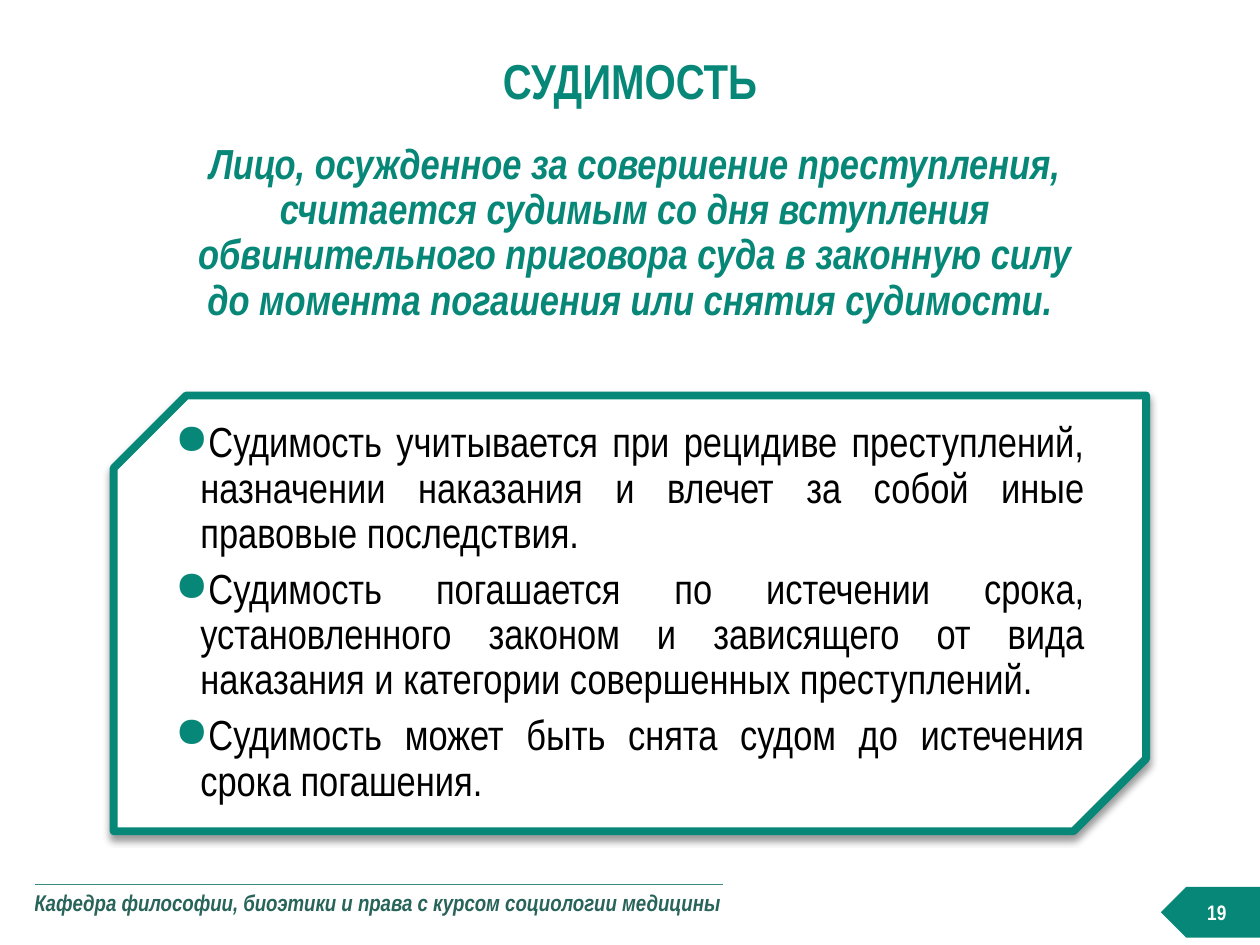
from dataclasses import dataclass
from typing import Any

from lxml.etree import SubElement
from pptx import Presentation
from pptx.dml.color import RGBColor
from pptx.enum.shapes import MSO_SHAPE
from pptx.enum.text import MSO_ANCHOR, PP_ALIGN
from pptx.oxml.ns import qn
from pptx.util import Pt


@dataclass(frozen=True)
class Theme:
    font: str = "Arial Narrow"
    accent: str = "078777"
    footer: str = "28645A"
    rule: str = "388E84"
    paper: str = "FFFFFF"
    ink: str = "000000"
    title_size: float = 28
    body_size: float = 24
    footer_size: float = 13
    number_size: float = 12


@dataclass(frozen=True)
class Box:
    left: float
    top: float
    width: float
    height: float

    def lengths(self) -> list[Pt]:
        return [Pt(v) for v in (self.left, self.top, self.width, self.height)]


@dataclass(frozen=True)
class TextStyle:
    size: float
    color: str
    paragraph: dict[str, Any]
    bold: bool = False
    italic: bool = False
    bullet: bool = False


THEME = Theme()
HEADING = {"alignment": PP_ALIGN.CENTER, "line_spacing": 0.9}
RULES = {"alignment": PP_ALIGN.JUSTIFY, "line_spacing": 0.9, "space_after": Pt(6)}
TITLE = TextStyle(THEME.title_size, THEME.accent, HEADING, bold=True)
DEFINITION = TextStyle(THEME.body_size, THEME.accent, HEADING, bold=True, italic=True)
RULE_LIST = TextStyle(THEME.body_size, THEME.ink, RULES, bullet=True)
NUMBER = TextStyle(THEME.number_size, THEME.paper, {"alignment": PP_ALIGN.CENTER}, bold=True)
FOOTER = TextStyle(THEME.footer_size, THEME.footer, {"alignment": PP_ALIGN.LEFT}, bold=True, italic=True)

CONSEQUENCES = [
    "Судимость учитывается при рецидиве преступлений, назначении наказания и влечет за собой иные правовые последствия.",
    "Судимость погашается по истечении срока, установленного законом и зависящего от вида наказания и категории совершенных преступлений.",
    "Судимость может быть снята судом до истечения срока погашения.",
]
DEFINITION_LINES = [
    "Лицо, осужденное за совершение преступления, считается судимым со дня вступления обвинительного приговора суда в законную силу",
    "до момента погашения или снятия судимости. ",
]


def set_all(target: Any, values: dict[str, Any]) -> None:
    for name, value in values.items():
        setattr(target, name, value)


def add_bullet(paragraph: Any) -> None:
    properties = paragraph._p.get_or_add_pPr()
    set_all(properties, {"marL": Pt(14.4), "indent": Pt(-14.4)})
    for name, value in {"marL": Pt(14.4), "indent": Pt(-14.4)}.items():
        properties.set(name, str(int(value)))
    bullet_color = SubElement(properties, qn("a:buClr"))
    SubElement(bullet_color, qn("a:srgbClr"), val=THEME.accent)
    SubElement(properties, qn("a:buChar"), char="●")


def write(frame: Any, paragraphs: list[list[str]], style: TextStyle) -> None:
    for index, lines in enumerate(paragraphs):
        paragraph = frame.paragraphs[0] if index == 0 else frame.add_paragraph()
        if style.bullet:
            add_bullet(paragraph)
        set_all(paragraph, style.paragraph)
        for position, line in enumerate(lines):
            if position:
                paragraph.add_line_break()
            run = paragraph.add_run()
            run.text = line
            set_all(run.font, {"name": THEME.font, "size": Pt(style.size),
                               "bold": style.bold, "italic": style.italic})
            run.font.color.rgb = RGBColor.from_string(style.color)


def set_frame(frame: Any, insets: tuple[float, float, float, float]) -> None:
    sides = ("margin_left", "margin_top", "margin_right", "margin_bottom")
    set_all(frame, {"word_wrap": True, "vertical_anchor": MSO_ANCHOR.MIDDLE,
                    **{side: Pt(inset) for side, inset in zip(sides, insets)}})


def add_text(slide: Any, box: Box, paragraphs: list[list[str]], style: TextStyle,
             insets: tuple[float, float, float, float]) -> None:
    frame = slide.shapes.add_textbox(*box.lengths()).text_frame
    set_frame(frame, insets)
    write(frame, paragraphs, style)


def add_mirrored(slide: Any, kind: MSO_SHAPE, box: Box, fill: str, paragraphs: list[list[str]],
                 style: TextStyle, insets: tuple[float, float, float, float]) -> Any:
    shape = slide.shapes.add_shape(kind, *box.lengths())
    shape.shadow.inherit = False
    shape._element.spPr.get_or_add_xfrm().set("flipH", "1")
    shape.fill.solid()
    shape.fill.fore_color.rgb = RGBColor.from_string(fill)
    shape.line.fill.background()
    set_frame(shape.text_frame, insets)
    write(shape.text_frame, paragraphs, style)
    return shape


def add_outline_and_shadow(shape: Any) -> None:
    shape.line.color.rgb = RGBColor.from_string(THEME.accent)
    shape.line.width = Pt(4.5)
    effects = shape._element.spPr.find(qn("a:effectLst"))
    shadow = SubElement(effects, qn("a:outerShdw"), blurRad=str(int(Pt(4))),
                        dist=str(int(Pt(3))), dir="5400000", rotWithShape="0")
    shadow_color = SubElement(shadow, qn("a:srgbClr"), val=THEME.ink)
    SubElement(shadow_color, qn("a:alpha"), val="40000")


def add_footer(slide: Any, box: Box, text: str) -> None:
    table = slide.shapes.add_table(1, 1, *box.lengths()).table
    set_all(table, {"first_row": False, "horz_banding": False})
    cell = table.cell(0, 0)
    set_all(cell, {"margin_left": 0, "margin_top": Pt(5.76), "margin_right": 0, "margin_bottom": 0})
    write(cell.text_frame, [[text]], FOOTER)
    border = SubElement(cell._tc.get_or_add_tcPr(), qn("a:lnT"), w=str(int(Pt(1))))
    border_fill = SubElement(border, qn("a:solidFill"))
    SubElement(border_fill, qn("a:srgbClr"), val=THEME.rule)
    cell.fill.background()


def main() -> None:
    presentation = Presentation()
    set_all(presentation, {"slide_width": Pt(720), "slide_height": Pt(540)})
    slide = presentation.slides.add_slide(presentation.slide_layouts[6])

    add_footer(slide, Box(19.6, 505.4, 393.8, 31),
               "Кафедра философии, биоэтики и права с курсом социологии медицины")
    consequences = add_mirrored(slide, MSO_SHAPE.SNIP_2_DIAG_RECTANGLE, Box(65, 226, 590, 249),
                                THEME.paper, [[rule] for rule in CONSEQUENCES], RULE_LIST,
                                (14.4, 14.4, 14.4, 14.4))
    add_outline_and_shadow(consequences)
    add_mirrored(slide, MSO_SHAPE.PENTAGON, Box(663.4, 506.8, 56.6, 29), THEME.accent,
                 [["19"]], NUMBER, (7.2, 3.6, 7.2, 3.6))
    add_text(slide, Box(100, 22.5, 520, 50), [["СУДИМОСТЬ"]], TITLE, (0, 0, 0, 0))
    add_text(slide, Box(65, 77, 584, 113), [DEFINITION_LINES], DEFINITION, (14.4, 2.88, 2.88, 2.88))

    presentation.save("out.pptx")


if __name__ == "__main__":
    main()
